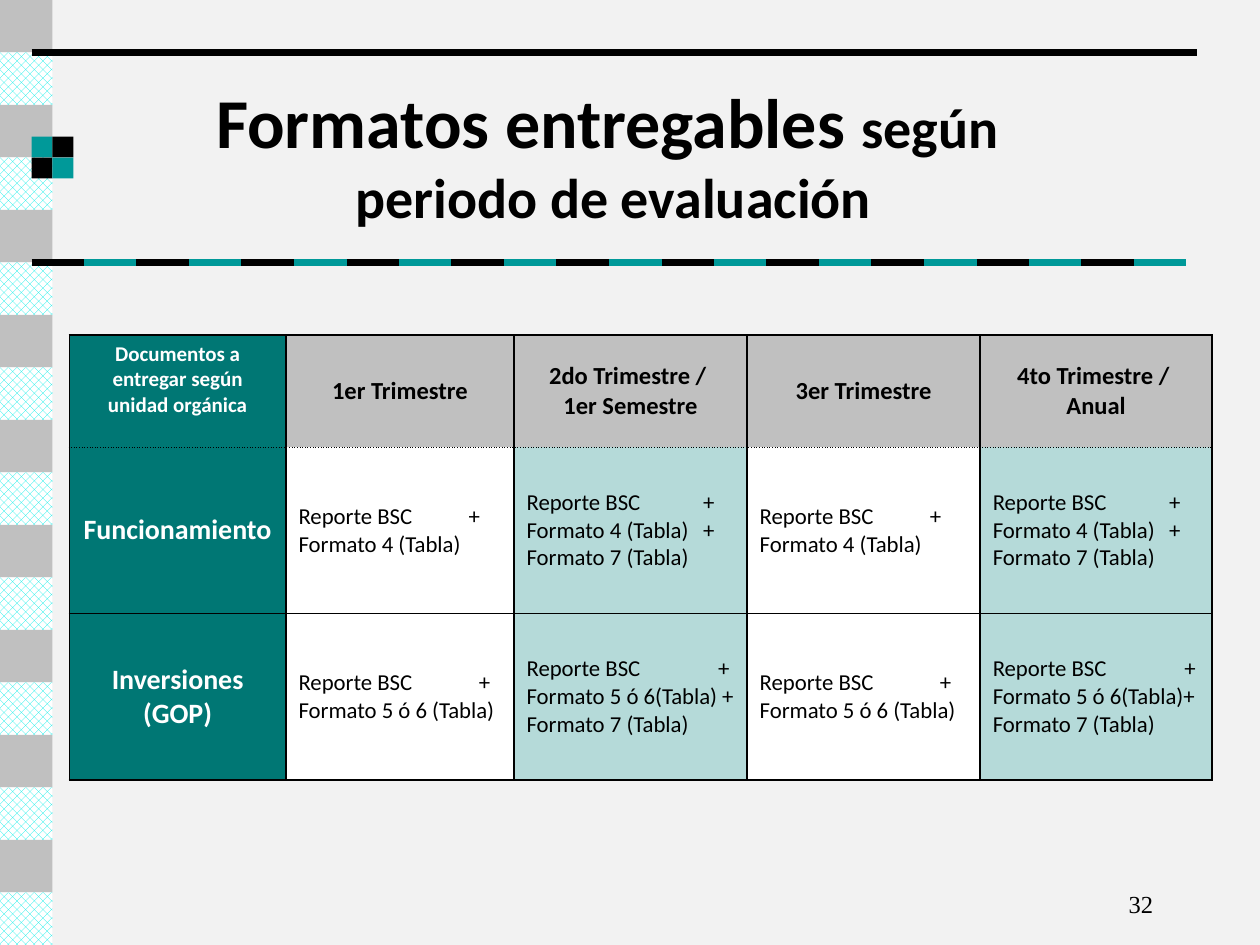
from collections import namedtuple
from dataclasses import dataclass

from lxml.etree import SubElement
from pptx import Presentation
from pptx.dml.color import RGBColor
from pptx.enum.dml import MSO_PATTERN
from pptx.enum.shapes import MSO_CONNECTOR as Connector, MSO_SHAPE as Shape
from pptx.enum.text import MSO_ANCHOR as Anchor, MSO_AUTO_SIZE as AutoSize, PP_ALIGN as Align
from pptx.oxml import parse_xml
from pptx.oxml.ns import nsdecls, qn
from pptx.util import Inches, Pt

Box = namedtuple("Box", "left top width height")


@dataclass(frozen=True)
class Theme:
    background: str = "F2F2F2"
    black: str = "000000"
    white: str = "FFFFFF"
    gray: str = "C0C0C0"
    aqua: str = "00EEE8"
    teal: str = "009999"
    dark_teal: str = "007774"
    pale_teal: str = "B5DAD9"
    font: str = "Calibri"
    number_font: str = "Times New Roman"
    title: float = 40
    subtitle: float = 32
    row_label: float = 16
    heading: float = 14
    body: float = 13
    corner: float = 12
    rule: float = 4.5


THEME = Theme()
UNIT = 5 / 12  # side of a stripe tile and length of a dash

HEADINGS = [
    ["Documentos a entregar según unidad orgánica"],
    ["1er Trimestre"],
    ["2do Trimestre / ", "1er Semestre"],
    ["3er Trimestre"],
    ["4to Trimestre / ", "Anual"],
]
OPERATION_SHORT = ["Reporte BSC\t+", "Formato 4 (Tabla)"]
OPERATION_LONG = ["Reporte BSC\t+", "Formato 4 (Tabla)\t+", "Formato 7 (Tabla)"]
INVESTMENT_SHORT = ["Reporte BSC\t+", "Formato 5 ó 6 (Tabla)"]
ROWS = [
    [["Funcionamiento"], OPERATION_SHORT, OPERATION_LONG, OPERATION_SHORT, OPERATION_LONG],
    [["Inversiones (GOP)"], INVESTMENT_SHORT,
     ["Reporte BSC\t+", "Formato 5 ó 6(Tabla) +", "Formato 7 (Tabla)"], INVESTMENT_SHORT,
     ["Reporte BSC\t+", "Formato 5 ó 6(Tabla)+", "Formato 7 (Tabla)"]],
]
COLUMN_WIDTHS = [1.72, 1.81, 1.85, 1.85, 1.84]
ROW_HEIGHTS = [0.89, 1.32, 1.32]
PLUS_TABS = [(1.35, 1.4), (1.43, 1.52)]  # for each row: short cell, long cell


def color(value):
    return RGBColor.from_string(value)


def apply(target, settings):
    for name, value in settings.items():
        setattr(target, name, value)


def add_run(paragraph, text, size, ink, bold=False, font=THEME.font):
    run = paragraph.add_run()
    run.text = text
    apply(run.font, {"name": font, "size": Pt(size), "bold": bold})
    run.font.color.rgb = color(ink)


def add_square(slide, left, top, side, fill, patterned=False):
    shape = slide.shapes.add_shape(
        Shape.RECTANGLE, Inches(left), Inches(top), Inches(side), Inches(side))
    shape.shadow.inherit = False
    shape.line.fill.background()
    if patterned:
        shape.fill.patterned()
        shape.fill.pattern = MSO_PATTERN.PERCENT_50
        shape.fill.fore_color.rgb = color(fill)
        shape.fill.back_color.rgb = color(THEME.white)
    else:
        shape.fill.solid()
        shape.fill.fore_color.rgb = color(fill)


def add_rule(slide, left, right, top, ink):
    line = slide.shapes.add_connector(
        Connector.STRAIGHT, Inches(left), Inches(top), Inches(right), Inches(top))
    line.line.color.rgb = color(ink)
    line.line.width = Pt(THEME.rule)
    SubElement(line._element.spPr, qn("a:effectLst"))


def add_stripe(slide, box):
    """Column of tiles, alternately plain and patterned."""
    for index in range(round(box.height / box.width)):
        odd = index % 2 == 1
        add_square(slide, box.left, box.top + index * box.width, box.width,
                   THEME.aqua if odd else THEME.gray, patterned=odd)


def add_title_frame(slide, box):
    """Solid rule above, two-colour rule below, checker at the left."""
    add_rule(slide, box.left, box.left + box.width, box.top, THEME.black)
    inks = (THEME.black, THEME.teal)
    for index in range(int(box.width / UNIT)):
        start = box.left + index * UNIT
        add_rule(slide, start, start + UNIT, box.top + box.height, inks[index % 2])
    side = 1 / 6
    for row in range(2):
        for column in range(2):
            add_square(slide, box.left + column * side, box.top + 2 / 3 + row * side, side,
                       THEME.teal if row == column else THEME.black)


def add_title(slide, box):
    title = slide.shapes.title
    apply(title, {name: Inches(value) for name, value in box._asdict().items()})
    frame = title.text_frame
    apply(frame, {"word_wrap": True, "auto_size": AutoSize.NONE, "vertical_anchor": Anchor.MIDDLE})
    first, second = frame.paragraphs[0], frame.add_paragraph()
    add_run(first, "Formatos entregables ", THEME.title, THEME.black, bold=True)
    add_run(first, "según ", THEME.subtitle, THEME.black, bold=True)
    add_run(second, "periodo de evaluación", THEME.subtitle, THEME.black, bold=True)
    for paragraph in (first, second):
        paragraph.alignment = Align.CENTER


def add_borders(cell, dotted):
    properties = cell._tc.get_or_add_tcPr()
    for index, side in enumerate("LRTB"):
        dash = "sysDot" if side == dotted else "solid"
        properties.insert(index, parse_xml(
            f'<a:ln{side} {nsdecls("a")} w="12700"><a:solidFill><a:srgbClr val="{THEME.black}"/>'
            f'</a:solidFill><a:prstDash val="{dash}"/></a:ln{side}>'))


def add_tab_stop(paragraph, position):
    tabs = SubElement(paragraph._p.get_or_add_pPr(), qn("a:tabLst"))
    SubElement(tabs, qn("a:tab"), pos=str(Inches(position)), algn="l")


def cell_style(row, column):
    """Fill, ink, size, bold and alignment by place in the table."""
    if column == 0:
        size = THEME.row_label if row else THEME.corner
        return THEME.dark_teal, THEME.white, size, True, Align.CENTER
    if row == 0:
        return THEME.gray, THEME.black, THEME.heading, True, Align.CENTER
    fill = THEME.white if column % 2 else THEME.pale_teal
    return fill, THEME.black, THEME.body, False, Align.LEFT


def fill_cell(cell, row, column, lines):
    fill, ink, size, bold, alignment = cell_style(row, column)
    cell.fill.solid()
    cell.fill.fore_color.rgb = color(fill)
    cell.vertical_anchor = Anchor.MIDDLE if row or column else Anchor.TOP
    add_borders(cell, {0: "B", 1: "T"}.get(row))
    frame = cell.text_frame
    for index, line in enumerate(lines):
        paragraph = frame.add_paragraph() if index else frame.paragraphs[0]
        paragraph.alignment = alignment
        if "\t" in line:
            add_tab_stop(paragraph, PLUS_TABS[row - 1][len(lines) > 2])
        add_run(paragraph, line, size, ink, bold)


def add_formats_table(slide, box):
    content = [HEADINGS, *ROWS]
    table = slide.shapes.add_table(
        len(content), len(HEADINGS), *(Inches(value) for value in box)).table
    apply(table, {"first_row": False, "horz_banding": False})
    for column, width in zip(table.columns, COLUMN_WIDTHS):
        column.width = Inches(width)
    for row, height in zip(table.rows, ROW_HEIGHTS):
        row.height = Inches(height)
    for row, cells in enumerate(content):
        for column, lines in enumerate(cells):
            fill_cell(table.cell(row, column), row, column, lines)


def add_page_number(slide, box):
    frame = slide.shapes.add_textbox(*(Inches(value) for value in box)).text_frame
    apply(frame, {"word_wrap": True, "vertical_anchor": Anchor.MIDDLE})
    paragraph = frame.paragraphs[0]
    paragraph.alignment = Align.RIGHT
    add_run(paragraph, "32", THEME.heading, THEME.black, font=THEME.number_font)


def main():
    presentation = Presentation()
    apply(presentation, {"slide_width": Inches(10), "slide_height": Inches(7.5)})
    slide = presentation.slides.add_slide(presentation.slide_layouts[5])
    slide.background.fill.solid()
    slide.background.fill.fore_color.rgb = color(THEME.background)
    add_stripe(slide, Box(0, 0, UNIT, 7.5))
    add_title_frame(slide, Box(0.25, UNIT, 9.25, 4 * UNIT))
    add_page_number(slide, Box(7.17, 6.92, 2.08, 0.5))
    add_formats_table(slide, Box(0.55, 2.66, sum(COLUMN_WIDTHS), sum(ROW_HEIGHTS)))
    add_title(slide, Box(0.23, 0.6, 9.28, 1.25))
    presentation.save("out.pptx")


if __name__ == "__main__":
    main()
